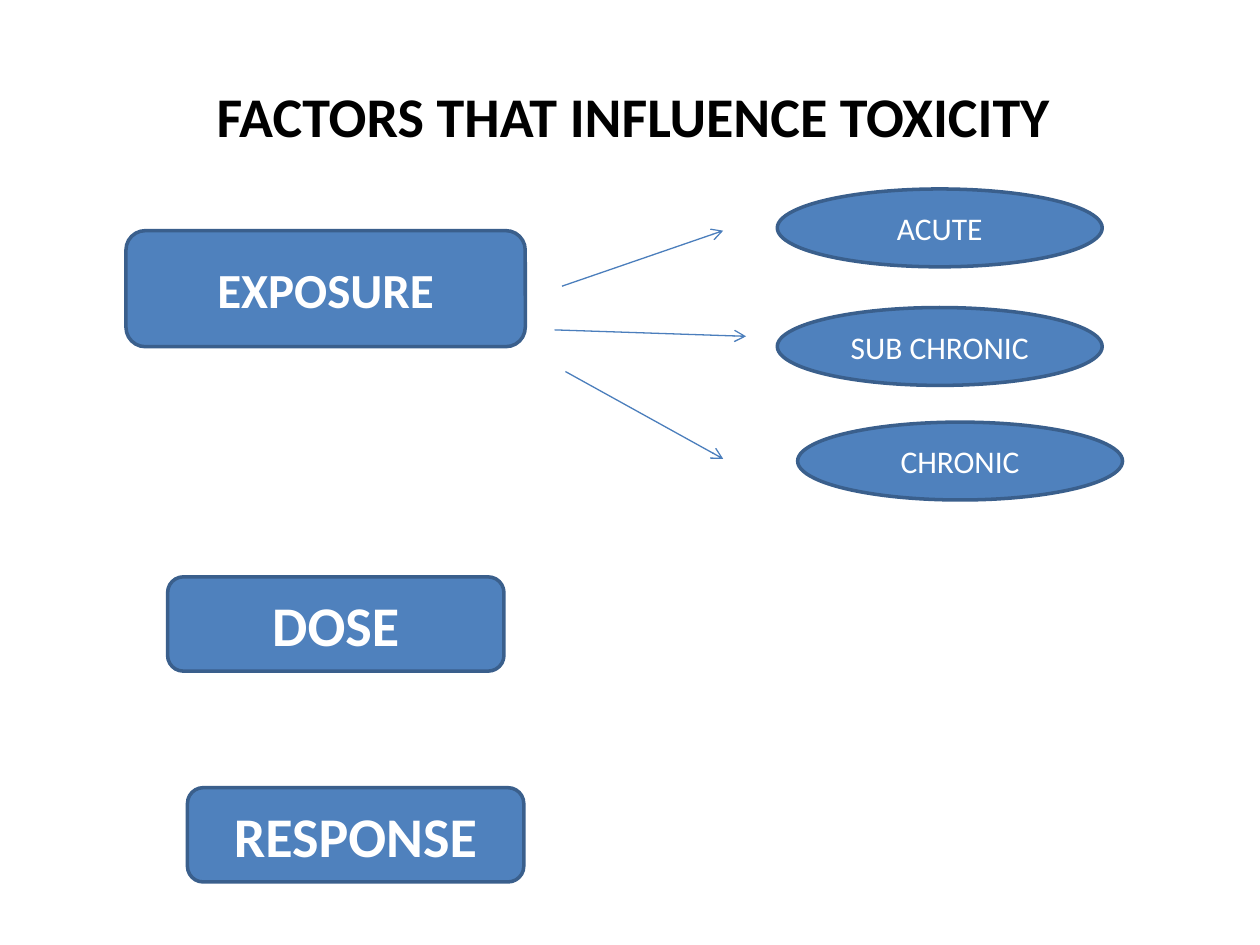
from lxml import etree
from pptx import Presentation
from pptx.dml.color import RGBColor
from pptx.enum.shapes import MSO_CONNECTOR, MSO_SHAPE
from pptx.enum.text import MSO_ANCHOR, PP_ALIGN
from pptx.oxml.ns import qn
from pptx.util import Cm, Pt

ROUNDED = MSO_SHAPE.ROUNDED_RECTANGLE
OVAL = MSO_SHAPE.OVAL
STRAIGHT = MSO_CONNECTOR.STRAIGHT
MIDDLE = MSO_ANCHOR.MIDDLE
CENTER = PP_ALIGN.CENTER

BLUE = RGBColor(0x4F, 0x81, 0xBD)
OUTLINE = RGBColor(0x3A, 0x5F, 0x8C)
ARROW = RGBColor(0x4B, 0x7E, 0xBC)
WHITE = RGBColor(0xFF, 0xFF, 0xFF)
BLACK = RGBColor(0, 0, 0)

# Offsets from the top left corner of the exposure region, in cm.
EXPOSURE_TYPES = [("ACUTE", 13.13, 0), ("SUB CHRONIC", 13.13, 2.39), ("CHRONIC", 13.54, 4.7)]
EXPOSURE_ARROWS = [
    (8.79, 1.96, 12.04, 0.84),
    (8.64, 2.84, 12.5, 2.97),
    (8.86, 3.68, 12.04, 5.44),
]


def write_text(text_frame, text, size, color, bold):
    text_frame.word_wrap = True
    paragraph = text_frame.paragraphs[0]
    paragraph.text = text
    paragraph.alignment = CENTER
    font = paragraph.font
    font.name = "Calibri"
    font.size = Pt(size)
    font.bold = bold
    font.color.rgb = color


def add_title(slide, text, left, top, width, height):
    box = slide.shapes.add_textbox(Cm(left), Cm(top), Cm(width), Cm(height))
    write_text(box.text_frame, text, 32, BLACK, True)


def add_node(slide, kind, text, left, top, width, height, size, bold=True):
    shape = slide.shapes.add_shape(kind, Cm(left), Cm(top), Cm(width), Cm(height))
    shape.shadow.inherit = False
    shape.fill.solid()
    shape.fill.fore_color.rgb = BLUE
    shape.line.color.rgb = OUTLINE
    shape.line.width = Pt(2)
    shape.text_frame.vertical_anchor = MIDDLE
    write_text(shape.text_frame, text, size, WHITE, bold)


def add_arrow(slide, start_x, start_y, end_x, end_y):
    connector = slide.shapes.add_connector(
        STRAIGHT, Cm(start_x), Cm(start_y), Cm(end_x), Cm(end_y)
    )
    connector.line.color.rgb = ARROW
    connector.line.width = Pt(0.75)
    properties = connector.element.spPr
    etree.SubElement(properties.find(qn("a:ln")), qn("a:tailEnd"), type="arrow")
    etree.SubElement(properties, qn("a:effectLst"))


def add_exposure(slide, left, top):
    """Place the exposure box with arrows leading to its three types."""
    add_node(slide, ROUNDED, "EXPOSURE", left, top + 0.84, 8.05, 2.34, 28)
    for text, x, y in EXPOSURE_TYPES:
        add_node(slide, OVAL, text, left + x, top + y, 6.55, 1.57, 18, bold=False)
    for start_x, start_y, end_x, end_y in EXPOSURE_ARROWS:
        add_arrow(slide, left + start_x, top + start_y, left + end_x, top + end_y)


def main():
    presentation = Presentation()
    presentation.slide_width = Cm(25.4)
    presentation.slide_height = Cm(19.05)
    slide = presentation.slides.add_slide(presentation.slide_layouts[6])
    add_title(slide, "FACTORS THAT INFLUENCE TOXICITY", 3.78, 1.52, 17.98, 1.63)
    add_exposure(slide, 2.54, 3.81)
    for text, left, top in [("DOSE", 3.38, 11.63), ("RESPONSE", 3.78, 15.88)]:
        add_node(slide, ROUNDED, text, left, top, 6.78, 1.9, 32)
    presentation.save("out.pptx")


if __name__ == "__main__":
    main()
